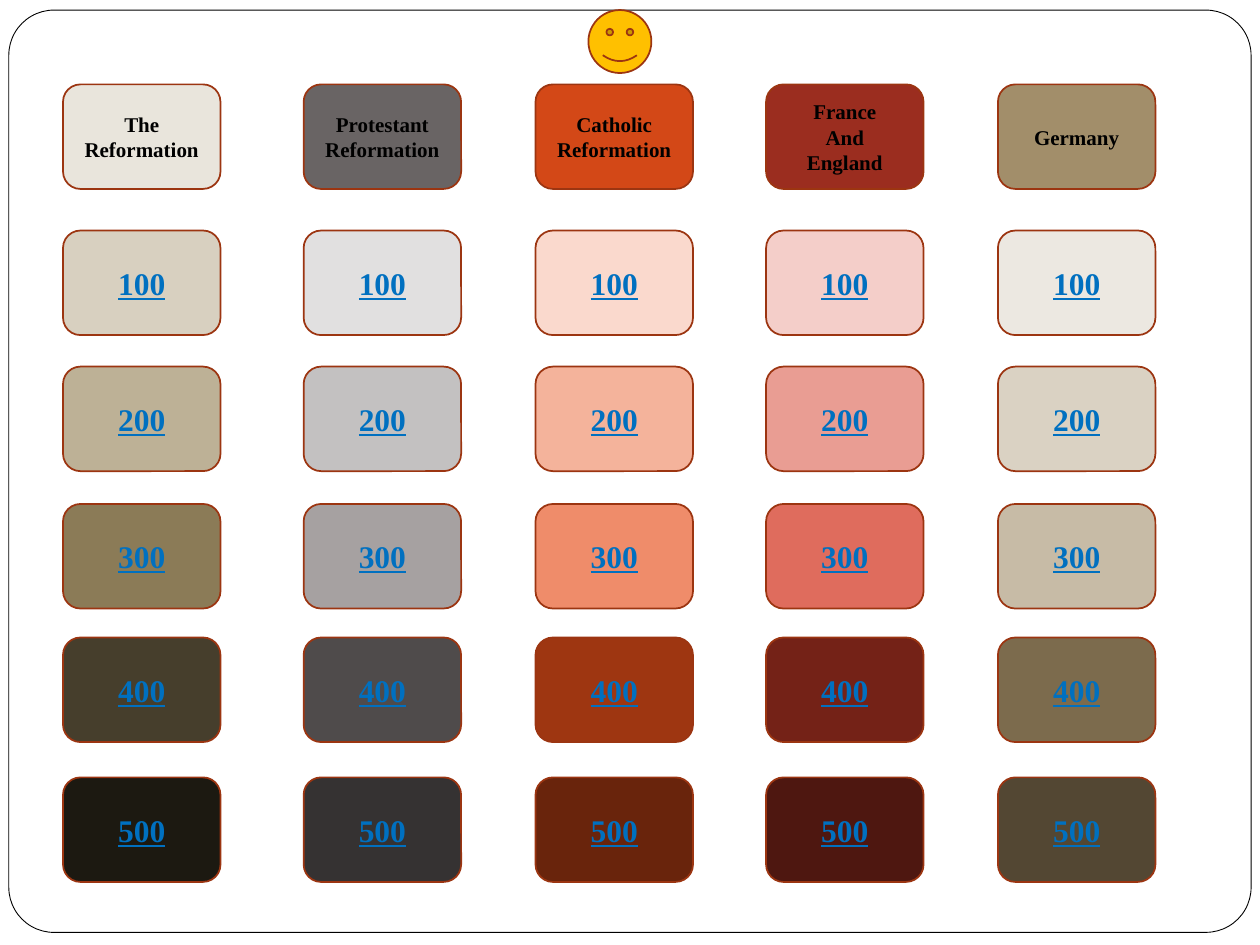
import pptx
import pptx.util
import pptx.dml.color
import pptx.enum.shapes
import pptx.enum.text

Inches = pptx.util.Inches
Pt = pptx.util.Pt
SHAPES = pptx.enum.shapes.MSO_SHAPE

COLORS = {
    "frame": "FFFFFF",
    "frame_line": "000000",
    "card_line": "9C3511",
    "heading": "000000",
    "points": "0070C0",
    "smiley": "FFC000",
}
FONT = "Times New Roman"
CARD_W, CARD_H = 1.25, 0.83
HEADING_TOP = 0.67
POINT_ROWS = [(100, 1.83), (200, 2.91), (300, 4), (400, 5.06), (500, 6.17)]
CATEGORIES = [
    (0.5, "The Reformation",
     ["E9E5DC", "D8D0C0", "BDB196", "8B7B57", "463E2C", "1C1911"]),
    (2.41, "Protestant Reformation",
     ["696464", "E1E0E0", "C3C1C1", "A6A1A1", "4F4B4B", "353232"]),
    (4.25, "Catholic Reformation",
     ["D34817", "FAD9CD", "F4B39B", "EF8C6A", "9E3611", "69240C"]),
    (6.08, "France\nAnd\nEngland",
     ["9B2D1F", "F4CEC9", "E99D93", "DF6C5D", "742217", "4E1710"]),
    (7.92, "Germany",
     ["A28E6A", "ECE8E1", "DAD2C3", "C7BBA6", "7C6B4D", "534733"]),
]


def rgb(value):
    return pptx.dml.color.RGBColor.from_string(value)


class Board:
    def __init__(self, slide):
        self.slide = slide

    def shape(self, kind, left, top, width, height, fill, line, weight=1):
        sp = self.slide.shapes.add_shape(
            kind, Inches(left), Inches(top), Inches(width), Inches(height))
        sp.shadow.inherit = False
        sp.fill.solid()
        sp.fill.fore_color.rgb = rgb(fill)
        sp.line.color.rgb = rgb(line)
        sp.line.width = Pt(weight)
        return sp

    def frame(self):
        sp = self.shape(SHAPES.ROUNDED_RECTANGLE, 0.07, 0.08, 9.86, 7.32,
                        COLORS["frame"], COLORS["frame_line"], 0.5)
        sp.adjustments[0] = 0.049

    def card(self, left, top, fill, text, size, color, underline=None):
        sp = self.shape(SHAPES.ROUNDED_RECTANGLE, left, top, CARD_W, CARD_H,
                        fill, COLORS["card_line"])
        tf = sp.text_frame
        tf.word_wrap = True
        tf.vertical_anchor = pptx.enum.text.MSO_ANCHOR.MIDDLE
        tf.text = text
        for p in tf.paragraphs:
            p.alignment = pptx.enum.text.PP_ALIGN.CENTER
            p.font.name = FONT
            p.font.size = Pt(size)
            p.font.bold = True
            p.font.underline = underline
            p.font.color.rgb = rgb(color)

    def smiley(self):
        self.shape(SHAPES.SMILEY_FACE, 4.67, 0.08, 0.5, 0.5,
                   COLORS["smiley"], COLORS["card_line"])


def main():
    prs = pptx.Presentation()
    prs.slide_width = Inches(10)
    prs.slide_height = Inches(7.5)
    board = Board(prs.slides.add_slide(prs.slide_layouts[6]))
    board.frame()
    for left, heading, fills in CATEGORIES:
        board.card(left, HEADING_TOP, fills[0], heading, 12, COLORS["heading"])
        for (points, top), fill in zip(POINT_ROWS, fills[1:]):
            board.card(left, top, fill, str(points), 18, COLORS["points"], True)
    board.smiley()
    prs.save("out.pptx")


if __name__ == "__main__":
    main()
